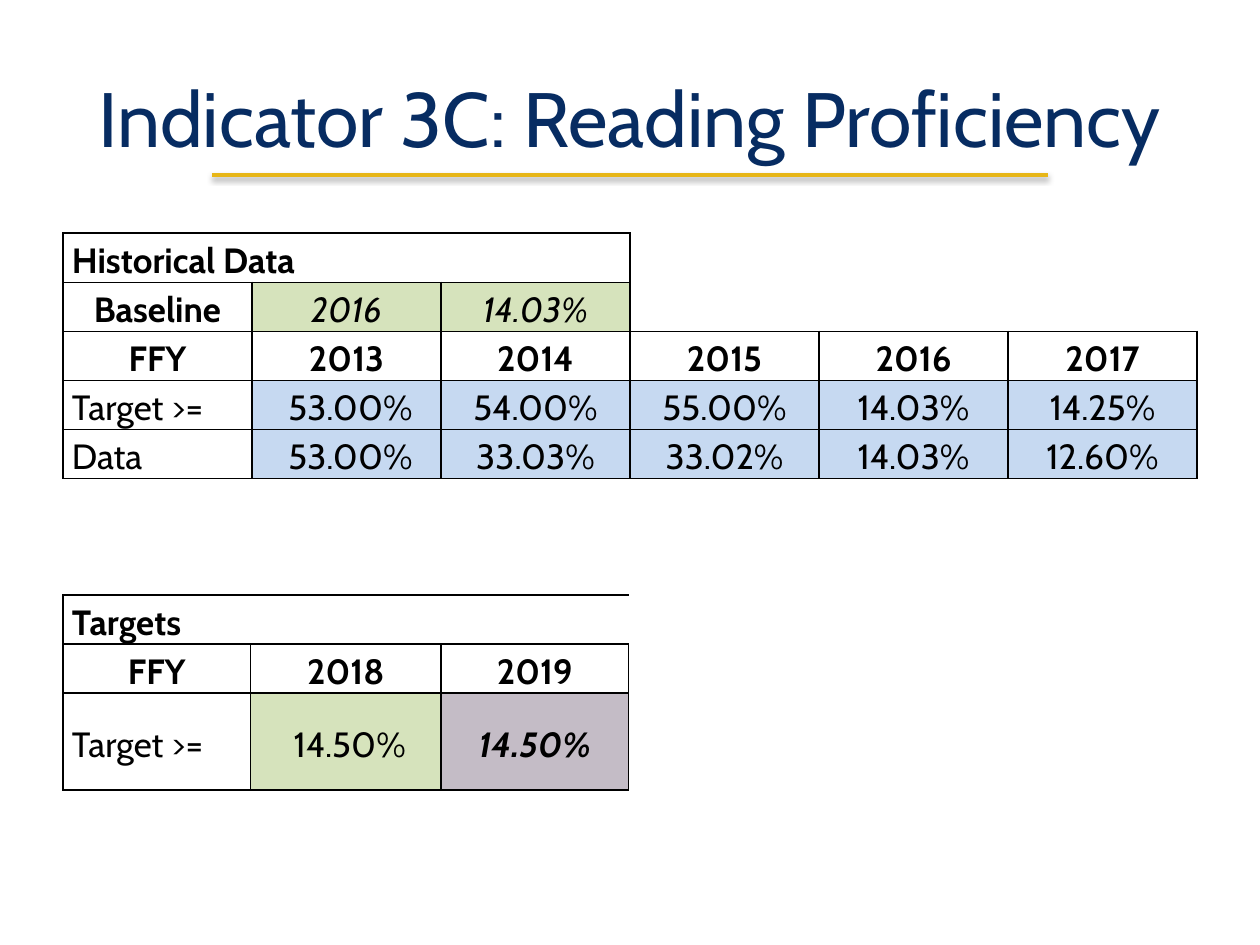
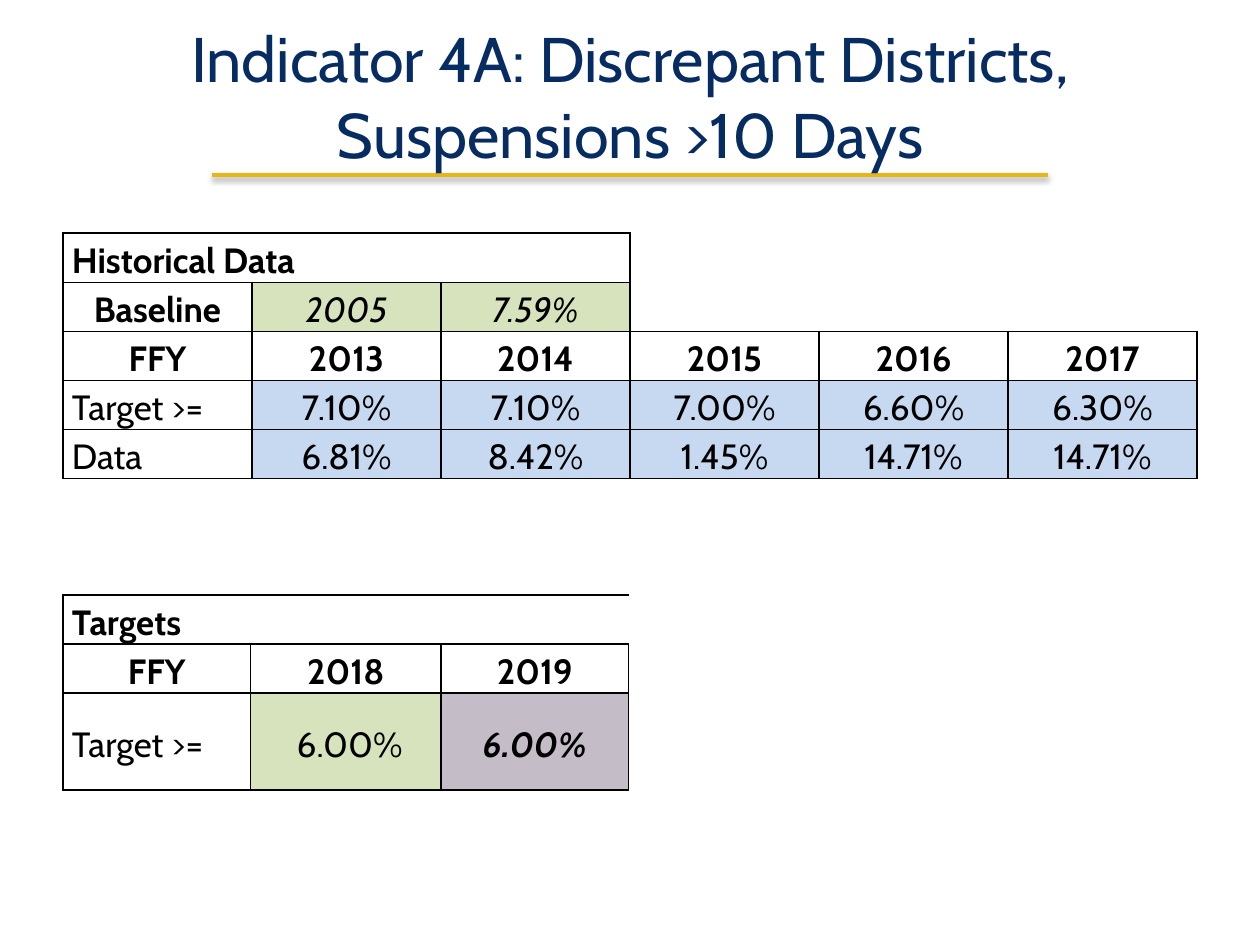
from collections import namedtuple

from lxml import etree
from pptx import Presentation
from pptx.dml.color import RGBColor
from pptx.enum.shapes import MSO_CONNECTOR
from pptx.enum.text import MSO_ANCHOR, MSO_AUTO_SIZE, PP_ALIGN
from pptx.oxml import parse_xml
from pptx.util import Cm, Pt

LEFT, CENTER = PP_ALIGN.LEFT, PP_ALIGN.CENTER
MIDDLE = MSO_ANCHOR.MIDDLE
NO_AUTOFIT = MSO_AUTO_SIZE.NONE
STRAIGHT = MSO_CONNECTOR.STRAIGHT
DRAWING_NS = "http://schemas.openxmlformats.org/drawingml/2006/main"

FONT = "Cabin"
NAVY, GOLD, BLACK = "072C62", "E7B617", "000000"
GREEN, BLUE, MAUVE = "D6E3BC", "C6D9F1", "C4BCC6"

Look = namedtuple("Look", "align bold italic fill")
HEADING = Look(LEFT, True, False, None)
YEAR = Look(CENTER, True, False, None)
ROW_NAME = Look(LEFT, False, False, None)
BASELINE = Look(CENTER, False, True, GREEN)
RESULT = Look(CENTER, False, False, BLUE)
TARGET = Look(CENTER, False, False, GREEN)
NEW_TARGET = Look(CENTER, True, True, MAUVE)

HISTORY_LOOKS = [[HEADING], [YEAR, BASELINE], [YEAR],
                 [ROW_NAME, RESULT], [ROW_NAME, RESULT]]
TARGET_LOOKS = [[HEADING], [YEAR], [ROW_NAME, TARGET, NEW_TARGET]]
YEARS = ["2013", "2014", "2015", "2016", "2017"]
ROW_HEIGHT = 0.99


def color(code):
    """Turn a hex string into a colour."""
    return RGBColor.from_string(code)


def owner(rows, row, column):
    """Return the first position of the merged area that holds a position."""
    if not (0 <= row < len(rows) and 0 <= column < len(rows[0])):
        return None
    text = rows[row][column]
    if text is None:
        return None
    return (row, column) if text else (row, 0)


class IndicatorDeck:
    """Hold the shared style and the current slide."""

    def __init__(self):
        """Start an empty deck."""
        self.deck = Presentation()
        self.deck.slide_width, self.deck.slide_height = Cm(25.4), Cm(19.05)
        self.page = None

    def style_text(self, para, size, code, align, bold=False, italic=False):
        """Format a paragraph and its runs."""
        para.alignment = align
        for span in para.runs:
            span.font.name, span.font.size = FONT, Pt(size)
            span.font.bold, span.font.italic = bold, italic
            span.font.color.rgb = color(code)

    def add_page(self, text, top, size):
        """Add a slide with its title and gold rule."""
        self.page = self.deck.slides.add_slide(self.deck.slide_layouts[5])
        title = self.page.shapes.title
        title.left, title.top = Cm(1.27), Cm(top)
        title.width, title.height = Cm(22.86), Cm(3.18)
        frame = title.text_frame
        frame.text = text
        frame.word_wrap, frame.auto_size = True, NO_AUTOFIT
        frame.vertical_anchor = MIDDLE
        self.style_text(frame.paragraphs[0], size, NAVY, CENTER)
        self.add_rule(title)

    def add_rule(self, title):
        """Draw the shadowed gold line behind the title."""
        rule = self.page.shapes.add_connector(
            STRAIGHT, Cm(4.27), Cm(3.53), Cm(21.13), Cm(3.53))
        rule.line.color.rgb, rule.line.width = color(GOLD), Pt(2)
        rule.element.spPr.append(parse_xml(
            f'<a:effectLst xmlns:a="{DRAWING_NS}">'
            f'<a:outerShdw blurRad="{Pt(3.1)}" dist="{Pt(1.6)}" dir="5400000" rotWithShape="0">'
            f'<a:srgbClr val="{BLACK}"><a:alpha val="38000"/></a:srgbClr>'
            '</a:outerShdw></a:effectLst>'))
        title.element.addprevious(rule.element)

    def add_grid(self, top, widths, heights, rows, looks):
        """Add a table; empty text joins the heading and None is left open."""
        grid = self.page.shapes.add_table(
            len(rows), len(widths), Cm(1.27), Cm(top),
            Cm(sum(widths)), Cm(sum(heights))).table
        grid.first_row = grid.horz_banding = False
        for column, width in zip(grid.columns, widths):
            column.width = Cm(width)
        for line, height in zip(grid.rows, heights):
            line.height = Cm(height)
        grid.cell(0, 0).merge(grid.cell(0, 2))
        if len(widths) > 3:
            grid.cell(0, 3).merge(grid.cell(1, len(widths) - 1))
        for row, texts in enumerate(rows):
            for column, text in enumerate(texts):
                cell = grid.cell(row, column)
                self.add_borders(cell, rows, row, column)
                look = looks[row][min(column, len(looks[row]) - 1)]
                self.fill_cell(cell, text, look)

    def add_borders(self, cell, rows, row, column):
        """Rule a cell wherever its neighbour belongs to another area."""
        here = owner(rows, row, column)
        steps = {"L": (0, -1), "R": (0, 1), "T": (-1, 0), "B": (1, 0)}
        properties = cell._tc.get_or_add_tcPr()
        for side, (down, across) in steps.items():
            edge = etree.SubElement(properties, f"{{{DRAWING_NS}}}ln{side}", w=str(Pt(1)))
            if owner(rows, row + down, column + across) == here:
                etree.SubElement(edge, f"{{{DRAWING_NS}}}noFill")
            else:
                paint = etree.SubElement(edge, f"{{{DRAWING_NS}}}solidFill")
                etree.SubElement(paint, f"{{{DRAWING_NS}}}srgbClr", val=BLACK)

    def fill_cell(self, cell, text, look):
        """Write and colour one cell."""
        cell.margin_left = cell.margin_right = Cm(0.18)
        cell.margin_top = cell.margin_bottom = 0
        cell.vertical_anchor = MIDDLE
        if look.fill and text:
            cell.fill.solid()
            cell.fill.fore_color.rgb = color(look.fill)
        else:
            cell.fill.background()
        if text:
            cell.text_frame.text = text
            para = cell.text_frame.paragraphs[0]
            para.line_spacing = 1.15
            self.style_text(para, 20, BLACK, look.align, look.bold, look.italic)

    def add_history(self, baseline, targets, results):
        """Add the table of past targets and results."""
        rows = [["Historical Data", "", "", None, None, None],
                ["Baseline", *baseline, None, None, None],
                ["FFY", *YEARS],
                ["Target >=", *targets],
                ["Data", *results]]
        self.add_grid(4.7, [3.81] * 6, [ROW_HEIGHT] * 5, rows, HISTORY_LOOKS)

    def add_targets(self, targets):
        """Add the table of coming targets."""
        rows = [["Targets", "", ""],
                ["FFY", "2018", "2019"],
                ["Target >=", *targets]]
        heights = [ROW_HEIGHT, ROW_HEIGHT, 1.96]
        self.add_grid(11.99, [3.78, 3.84, 3.78], heights, rows, TARGET_LOOKS)


def main():
    """Build both indicator slides."""
    show = IndicatorDeck()

    show.add_page("Indicator 3C: Reading Proficiency", 0.76, 44)
    show.add_history(["2016", "14.03%"],
                     [" 53.00%", "54.00%", "55.00%", "14.03%", "14.25%"],
                     [" 53.00%", "33.03%", "33.02%", "14.03%", "12.60%"])
    show.add_targets([" 14.50%", "14.50%"])

    show.add_page("Indicator 4A: Discrepant Districts, Suspensions >10 Days", 0.33, 36)
    show.add_history(["2005", "7.59%"],
                     ["7.10%", "7.10%", "7.00%", "6.60%", "6.30%"],
                     ["6.81%", "8.42%", "1.45%", "14.71%", "14.71%"])
    show.add_targets([" 6.00%", "6.00%"])

    show.deck.save("out.pptx")


if __name__ == "__main__":
    main()
